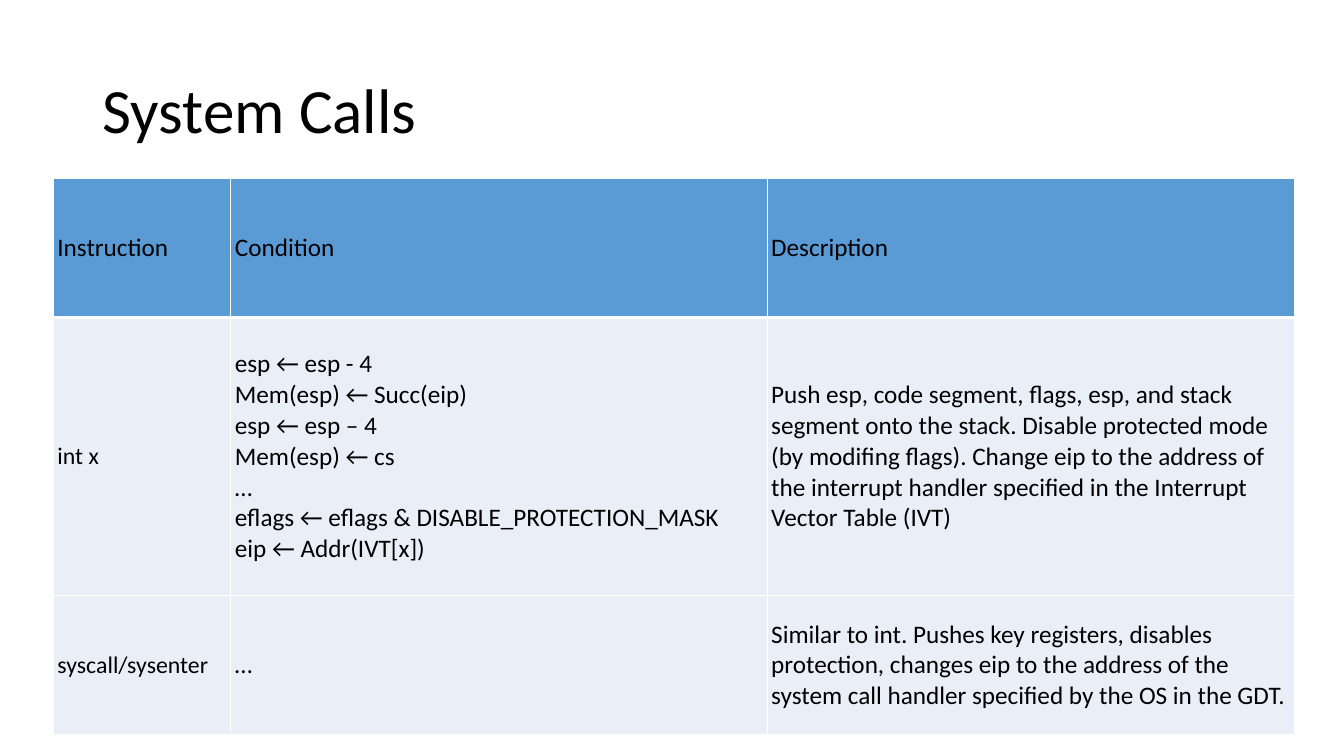
from lxml import etree
from pptx import Presentation
from pptx.dml.color import RGBColor
from pptx.enum.text import MSO_ANCHOR
from pptx.oxml.ns import qn
from pptx.util import Inches, Pt

BLACK = RGBColor(0x00, 0x00, 0x00)
WHITE = RGBColor(0xFF, 0xFF, 0xFF)
HEADER_BLUE = RGBColor(0x5B, 0x9B, 0xD5)
BODY_BLUE = RGBColor(0xEA, 0xEF, 0xF7)

COLUMN_WIDTHS = [1.76, 5.32, 5.23]
ROW_UNIT = 1.38
ROW_HEIGHTS = [ROW_UNIT, 2 * ROW_UNIT, ROW_UNIT]
CELL_INSET = Inches(0.04)

# Each cell is a list of paragraphs; a newline is a break inside one
ROWS = [
    [["Instruction"], ["Condition"], ["Description"]],
    [
        ["int x"],
        [
            "esp ← esp - 4\nMem(esp) ← Succ(eip)",
            "esp ← esp – 4",
            "Mem(esp) ← cs",
            "…",
            "eflags ← eflags & DISABLE_PROTECTION_MASK\neip ← Addr(IVT[x])",
        ],
        ["Push esp, code segment, flags, esp, and stack segment onto the stack. "
         "Disable protected mode (by modifing flags). Change eip to the address of "
         "the interrupt handler specified in the Interrupt Vector Table (IVT)"],
    ],
    [
        ["syscall/sysenter"],
        ["…"],
        ["Similar to int. Pushes key registers, disables protection, changes eip to "
         "the address of the system call handler specified by the OS in the GDT."],
    ],
]


def write_text(frame, paragraphs, size=18, color=BLACK, font="Calibri", spacing=None):
    frame.word_wrap = True
    for index, text in enumerate(paragraphs):
        paragraph = frame.paragraphs[0] if index == 0 else frame.add_paragraph()
        paragraph.text = text
        paragraph.line_spacing = spacing
        for run in paragraph.runs:
            run.font.name = font
            run.font.size = Pt(size)
            run.font.color.rgb = color


def set_borders(cell, **widths):
    properties = cell._tc.get_or_add_tcPr()
    for index, (side, width) in enumerate(widths.items()):
        line = etree.Element(qn(f"a:ln{side}"), w=str(Pt(width)))
        fill = etree.SubElement(line, qn("a:solidFill"))
        etree.SubElement(fill, qn("a:srgbClr"), val=str(WHITE))
        properties.insert(index, line)


presentation = Presentation()
presentation.slide_width = Inches(13.33)
presentation.slide_height = Inches(7.5)
slide = presentation.slides.add_slide(presentation.slide_layouts[6])
slide.background.fill.solid()
slide.background.fill.fore_color.rgb = WHITE

# Title
title = slide.shapes.add_textbox(Inches(0.92), Inches(0.4), Inches(11.5), Inches(1.45))
title.text_frame.vertical_anchor = MSO_ANCHOR.MIDDLE
write_text(title.text_frame, ["System Calls"], size=45, spacing=0.9)

# Table grid
table = slide.shapes.add_table(
    len(ROW_HEIGHTS), len(COLUMN_WIDTHS), Inches(0.53), Inches(1.77),
    Inches(sum(COLUMN_WIDTHS)), Inches(sum(ROW_HEIGHTS)),
).table
table.horz_banding = False
for column, width in zip(table.columns, COLUMN_WIDTHS):
    column.width = Inches(width)
for row, height in zip(table.rows, ROW_HEIGHTS):
    row.height = Inches(height)

# Table cells
for row_index, row in enumerate(ROWS):
    is_header = row_index == 0
    for column_index, paragraphs in enumerate(row):
        cell = table.cell(row_index, column_index)
        cell.vertical_anchor = MSO_ANCHOR.MIDDLE
        cell.margin_left = cell.margin_right = CELL_INSET
        cell.margin_top = cell.margin_bottom = CELL_INSET
        cell.fill.solid()
        cell.fill.fore_color.rgb = HEADER_BLUE if is_header else BODY_BLUE
        set_borders(cell, L=1, R=1, T=3 if row_index == 1 else 1, B=3 if is_header else 1)
        is_instruction = column_index == 0 and not is_header
        write_text(cell.text_frame, paragraphs, size=17 if is_instruction else 18)
        # The header row's bold comes from the table style
        for paragraph in cell.text_frame.paragraphs:
            for run in paragraph.runs:
                run.font.bold = False

presentation.save("out.pptx")
